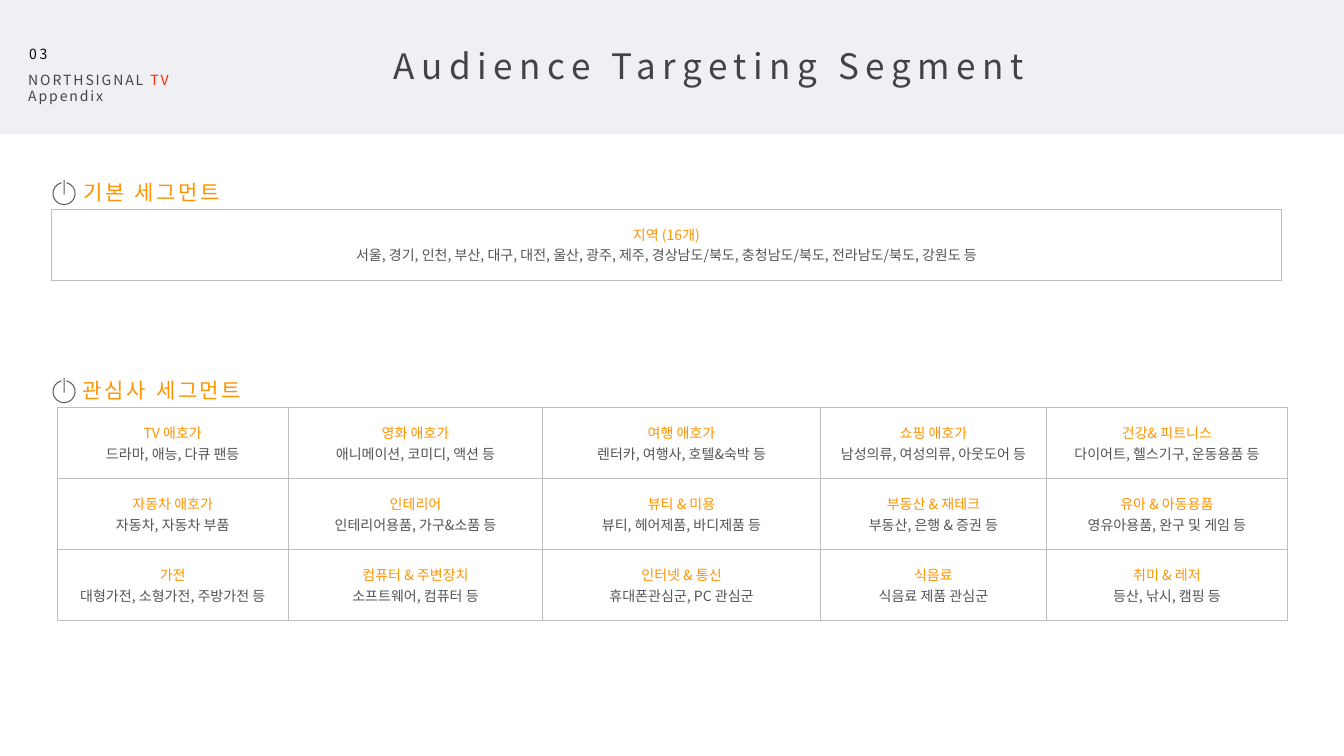
from dataclasses import dataclass
from math import cos, radians, sin, tan

from lxml import etree
from pptx import Presentation
from pptx.dml.color import RGBColor
from pptx.enum.shapes import MSO_SHAPE
from pptx.enum.text import MSO_ANCHOR, MSO_AUTO_SIZE, PP_ALIGN
from pptx.oxml.ns import qn
from pptx.util import Pt

RECT = MSO_SHAPE.RECTANGLE
MIDDLE = MSO_ANCHOR.MIDDLE
GROW = MSO_AUTO_SIZE.SHAPE_TO_FIT_TEXT
LEFT, CENTER = PP_ALIGN.LEFT, PP_ALIGN.CENTER
PX = 9144  # 100 px to the inch
INSET = 5
ARC_PIECES = 4


@dataclass(frozen=True)
class Theme:
    font: str = "Noto Sans CJK KR"
    band: str = "EFF0F4"
    black: str = "000000"
    dark: str = "414346"
    body: str = "515457"
    red: str = "FF2600"
    orange: str = "FF9300"
    icon: str = "53585F"
    border: str = "BFBFBF"
    border_pt: float = 0.75
    small: int = 20
    heading: int = 30
    title: int = 50


T = Theme()


@dataclass(frozen=True)
class Span:
    text: str
    color: str


@dataclass(frozen=True)
class Label:
    box: tuple[int, int, int, int]
    lines: list[list[Span]]
    size: int
    spacing: float
    align: PP_ALIGN = LEFT
    wrap: bool = True


@dataclass(frozen=True)
class Segment:
    name: str
    examples: str


@dataclass(frozen=True)
class Grid:
    left: int
    top: int
    row_height: int
    columns: list[int]
    rows: list[list[Segment]]


LABELS = [
    Label((53, 86, 85, 73), [[Span("03", T.black)]], T.small, 3.8),
    Label((51, 136, 474, 73),
          [[Span("NORTHSIGNAL ", T.dark), Span("TV", T.red)], [Span("Appendix", T.dark)]],
          T.small, 2.7),
    Label((488, 84, 1837, 87), [[Span("Audience Targeting Segment", T.dark)]],
          T.title, 9.4, CENTER),
    Label((158, 352, 286, 57), [[Span("기본 세그먼트", T.orange)]],
          T.heading, 3.8, CENTER, False),
    Label((157, 744, 329, 57), [[Span("관심사 세그먼트", T.orange)]],
          T.heading, 3.8, CENTER, False),
]

ICON_CENTERS = [(127, 384), (127, 777)]

GRIDS = [
    Grid(102, 415, 141, [509, 533, 557, 340, 500], [
        [Segment("지역 (16개)", "서울, 경기, 인천, 부산, 대구, 대전, 울산, 광주, 제주, "
                 "경상남도/북도, 충청남도/북도, 전라남도/북도, 강원도 등")],
    ]),
    Grid(113, 808, 141, [459, 504, 551, 448, 478], [
        [Segment("TV 애호가", "드라마, 애능, 다큐 팬등"),
         Segment("영화 애호가", "애니메이션, 코미디, 액션 등"),
         Segment("여행 애호가", "렌터카, 여행사, 호텔&숙박 등"),
         Segment("쇼핑 애호가", "남성의류, 여성의류, 아웃도어 등"),
         Segment("건강& 피트니스", "다이어트, 헬스기구, 운동용품 등")],
        [Segment("자동차 애호가", "자동차, 자동차 부품"),
         Segment("인테리어", "인테리어용품, 가구&소품 등"),
         Segment("뷰티 & 미용", "뷰티, 헤어제품, 바디제품 등"),
         Segment("부동산 & 재테크", "부동산, 은행 & 증권 등"),
         Segment("유아 & 아동용품", "영유아용품, 완구 및 게임 등")],
        [Segment("가전", "대형가전, 소형가전, 주방가전 등"),
         Segment("컴퓨터 & 주변장치", "소프트웨어, 컴퓨터 등"),
         Segment("인터넷 & 통신", "휴대폰관심군, PC 관심군"),
         Segment("식음료", "식음료 제품 관심군"),
         Segment("취미 & 레저", "등산, 낚시, 캠핑 등")],
    ]),
]


def px(*values: int) -> list[int]:
    return [v * PX for v in values]


def set_insets(target) -> None:
    target.margin_left = target.margin_right = INSET * PX
    target.margin_top = target.margin_bottom = INSET * PX


def style_run(r, color: str, size: int, spacing: float) -> None:
    r.font.name = T.font
    r.font.size = Pt(size)
    r.font.color.rgb = RGBColor.from_string(color)
    rPr = r.font._element
    etree.SubElement(rPr, qn("a:ea"), typeface=T.font)
    if spacing:
        rPr.set("spc", str(round(spacing * 100)))


def fill_shape(sp, color: str) -> None:
    sp.shadow.inherit = False
    sp.fill.solid()
    sp.fill.fore_color.rgb = RGBColor.from_string(color)
    sp.line.fill.background()


def write_lines(tf, lines: list[list[Span]], size: int, align: PP_ALIGN,
                spacing: float = 0) -> None:
    tf.text = "\n".join(spans[0].text for spans in lines)
    for p, spans in zip(tf.paragraphs, lines):
        p.alignment = align
        for span in spans[1:]:
            p.add_run().text = span.text
        for r, span in zip(p.runs, spans):
            style_run(r, span.color, size, spacing)


def add_label(s, label: Label) -> None:
    tf = s.shapes.add_textbox(*px(*label.box)).text_frame
    tf.word_wrap = label.wrap
    tf.auto_size = GROW
    set_insets(tf)
    write_lines(tf, label.lines, label.size, label.align, label.spacing)


def arc_points(cx: int, cy: int, radius: int, start: int, end: int) -> list[tuple[float, float]]:
    """Bezier points of an arc, with angles in degrees clockwise from the top."""
    step = radians(end - start) / ARC_PIECES
    handle = 4 / 3 * tan(step / 4)

    def at(angle: float, along: float) -> tuple[float, float]:
        return ((cx + radius * (sin(angle) + along * cos(angle))) * PX,
                (cy - radius * (cos(angle) - along * sin(angle))) * PX)

    points = [at(radians(start), 0)]
    for i in range(ARC_PIECES):
        a = radians(start) + i * step
        points += [at(a, handle), at(a + step, -handle), at(a + step, 0)]
    return points


def add_power_icon(s, cx: int, cy: int) -> None:
    # Open ring, then the bar through its gap
    outer = arc_points(cx, cy, 23, 13, 347)
    inner = arc_points(cx, cy, 21, 347, 13)
    bar = [tuple(px(cx + dx, cy + dy)) for dx, dy in ((-1, -27), (1, -27), (1, 2), (-1, 2))]
    builder = s.shapes.build_freeform(*outer[0])
    builder.add_line_segments(outer[1:] + inner, close=True)
    builder.move_to(*bar[0])
    builder.add_line_segments(bar[1:], close=True)
    sp = builder.convert_to_shape()
    fill_shape(sp, T.icon)

    # Each three arc points become one curve
    lines = list(sp._element.iter(qn("a:lnTo")))
    n = 3 * ARC_PIECES
    for first in (*range(0, n, 3), *range(n + 1, 2 * n + 1, 3)):
        curve = etree.Element(qn("a:cubicBezTo"))
        lines[first].addprevious(curve)
        for line in lines[first:first + 3]:
            curve.append(line[0])
            line.getparent().remove(line)


def set_borders(cell) -> None:
    tcPr = cell._tc.get_or_add_tcPr()
    for i, side in enumerate(("lnL", "lnR", "lnT", "lnB")):
        ln = etree.Element(qn(f"a:{side}"), w=str(Pt(T.border_pt)))
        fill = etree.SubElement(ln, qn("a:solidFill"))
        etree.SubElement(fill, qn("a:srgbClr"), val=T.border)
        tcPr.insert(i, ln)


def add_grid(s, grid: Grid) -> None:
    n_rows, n_cols = len(grid.rows), len(grid.columns)
    box = px(grid.left, grid.top, sum(grid.columns), grid.row_height * n_rows)
    table = s.shapes.add_table(n_rows, n_cols, *box).table
    table.first_row = table.horz_banding = False
    for col, width in zip(table.columns, grid.columns):
        col.width = width * PX
    for i, segments in enumerate(grid.rows):
        table.rows[i].height = grid.row_height * PX
        for cell in table.rows[i].cells:
            cell.fill.background()
            set_borders(cell)
        # A lone segment spans the whole row
        if len(segments) == 1:
            table.cell(i, 0).merge(table.cell(i, n_cols - 1))
        for j, segment in enumerate(segments):
            cell = table.cell(i, j)
            cell.vertical_anchor = MIDDLE
            set_insets(cell)
            lines = [[Span(segment.name, T.orange)], [Span(segment.examples, T.body)]]
            write_lines(cell.text_frame, lines, T.small, CENTER)


def main() -> None:
    prs = Presentation()
    prs.slide_width, prs.slide_height = px(2665, 1500)
    s = prs.slides.add_slide(prs.slide_layouts[6])

    # Header band
    fill_shape(s.shapes.add_shape(RECT, *px(0, 0, 2665, 266)), T.band)

    # Titles, icons and segment tables
    for label in LABELS:
        add_label(s, label)
    for cx, cy in ICON_CENTERS:
        add_power_icon(s, cx, cy)
    for grid in GRIDS:
        add_grid(s, grid)

    prs.save("out.pptx")


if __name__ == "__main__":
    main()
